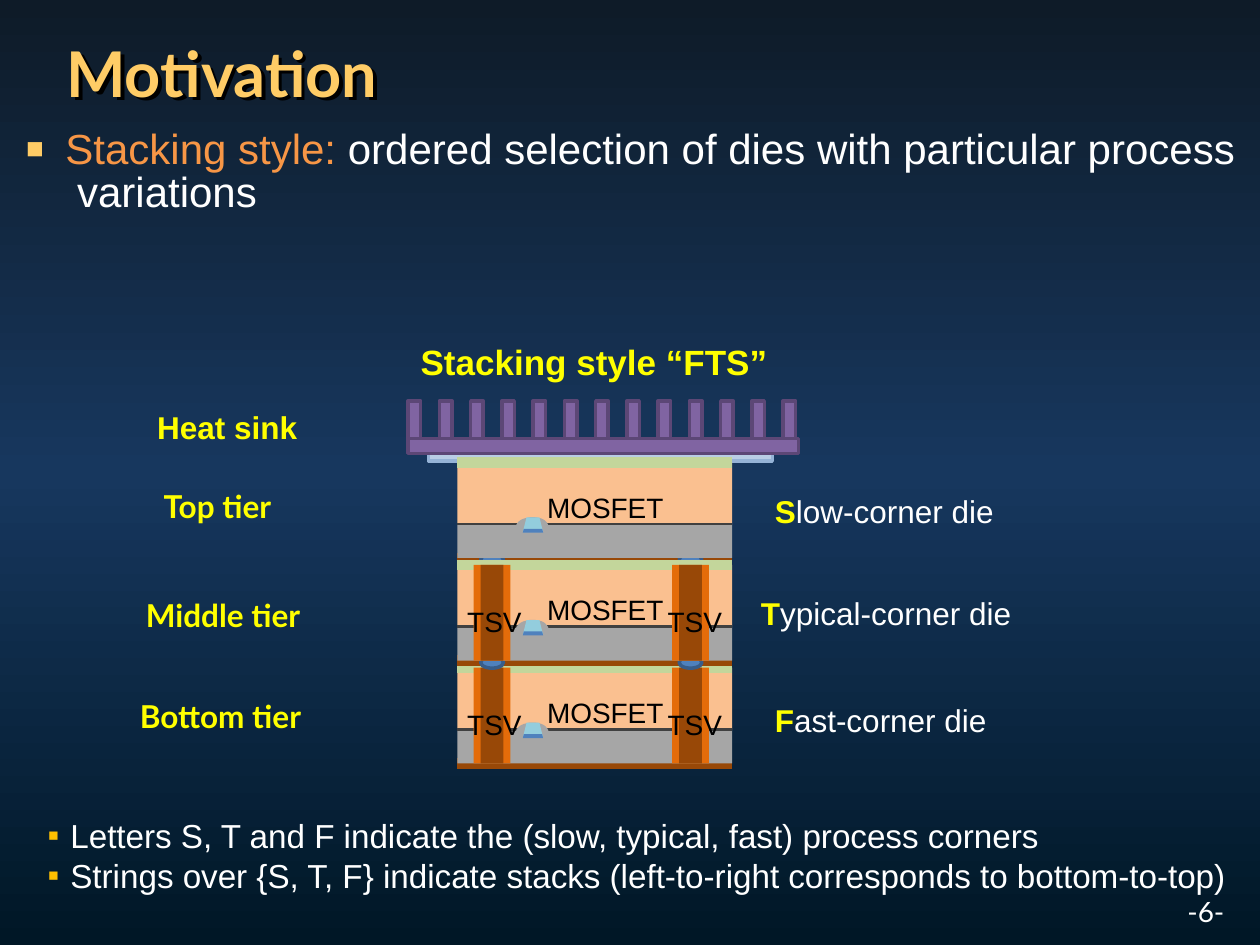
from copy import deepcopy

from lxml import etree
from pptx import Presentation
from pptx.dml.color import RGBColor
from pptx.enum.shapes import MSO_CONNECTOR, MSO_SHAPE as SHAPE
from pptx.enum.text import MSO_ANCHOR as ANCHOR, MSO_AUTO_SIZE as FIT, PP_ALIGN as ALIGN
from pptx.oxml.ns import qn
from pptx.util import Cm, Pt

YELLOW, WHITE, BLACK, GOLD = "FFFF00", "FFFFFF", "000000", "FFCC66"


def rgb(value):
    return RGBColor.from_string(value)


def bezier(p0, p1, p2, p3, steps=8):
    """Points along a cubic curve, without its start."""
    for i in range(1, steps + 1):
        t = i / steps
        u = 1 - t
        yield tuple(u**3 * a + 3 * u * u * t * b + 3 * u * t * t * c + t**3 * d
                    for a, b, c, d in zip(p0, p1, p2, p3))


class Deck:
    font = "Arial"

    def __init__(self, width, height):
        self.prs = Presentation()
        self.prs.slide_width, self.prs.slide_height = Cm(width), Cm(height)
        self.s = self.prs.slides.add_slide(self.prs.slide_layouts[6])

    def background(self, colours, angle):
        fill = self.s.background.fill
        fill.gradient()
        fill.gradient_angle = angle
        stops = self.s.element.find(".//" + qn("a:gsLst"))
        while len(stops) < len(colours):
            stops.append(deepcopy(stops[0]))
        for i, (stop, colour) in enumerate(zip(fill.gradient_stops, colours)):
            stop.position = i / (len(colours) - 1)
            stop.color.rgb = rgb(colour)

    def paint(self, sp, fill, line=None):
        sp.shadow.inherit = False
        sp.fill.solid()
        sp.fill.fore_color.rgb = rgb(fill)
        if line:
            sp.line.color.rgb = rgb(line)
            sp.line.width = Pt(2)
        else:
            sp.line.fill.background()

    def shape(self, x, y, w, h, fill, line=None, kind=SHAPE.RECTANGLE):
        sp = self.s.shapes.add_shape(kind, Cm(x), Cm(y), Cm(w), Cm(h))
        self.paint(sp, fill, line)

    def outline(self, points, fill):
        pts = [(Cm(x), Cm(y)) for x, y in points]
        builder = self.s.shapes.build_freeform(*pts[0], scale=1.0)
        builder.add_line_segments(pts[1:], close=True)
        self.paint(builder.convert_to_shape(), fill)

    def rule(self, x, y, w, colour, width):
        cxn = self.s.shapes.add_connector(
            MSO_CONNECTOR.STRAIGHT, Cm(x), Cm(y), Cm(x + w), Cm(y))
        cxn.line.color.rgb = rgb(colour)
        cxn.line.width = Pt(width)
        etree.SubElement(cxn._element.spPr, qn("a:effectLst"))

    def text(self, x, y, w, h, paragraphs, size, font=None, bold=False,
             wrap=True, fit=FIT.SHAPE_TO_FIT_TEXT):
        """Each paragraph is a list of (text, colour) or (text, colour, bold)."""
        sp = self.s.shapes.add_textbox(Cm(x), Cm(y), Cm(w), Cm(h))
        tf = sp.text_frame
        tf.word_wrap, tf.auto_size = wrap, fit
        for i, runs in enumerate(paragraphs):
            p = tf.add_paragraph() if i else tf.paragraphs[0]
            for content, colour, *own_bold in runs:
                r = p.add_run()
                r.text = content
                r.font.name, r.font.size = font or self.font, Pt(size)
                r.font.bold = own_bold[0] if own_bold else bold
                r.font.color.rgb = rgb(colour)
        return sp

    def bullets(self, sp, char, colour, indent, percent=100):
        for p in sp.text_frame.paragraphs:
            pPr = p._p.get_or_add_pPr()
            pPr.set("marL", str(Cm(indent)))
            pPr.set("indent", str(-Cm(indent)))
            clr = etree.SubElement(pPr, qn("a:buClr"))
            etree.SubElement(clr, qn("a:srgbClr"), val=colour)
            etree.SubElement(pPr, qn("a:buSzPct"), val=str(percent * 1000))
            etree.SubElement(pPr, qn("a:buFont"), typeface=self.font)
            etree.SubElement(pPr, qn("a:buChar"), char=char)

    def drop_shadow(self, sp, distance):
        effects = etree.SubElement(sp._element.spPr, qn("a:effectLst"))
        shadow = etree.SubElement(effects, qn("a:outerShdw"), dist=str(Pt(distance)),
                                  dir="2700000", algn="ctr", rotWithShape="0")
        etree.SubElement(shadow, qn("a:srgbClr"), val=BLACK)


def transistor(d, y):
    left, top_l, top_r, right = (10.41, 1.4), (10.62, 1.12), (10.87, 1.12), (11.05, 1.4)
    curve = [left,
             *bezier(left, (10.36, 1.28), (10.44, 1.15), top_l),
             *bezier(top_l, (10.69, 1.1), (10.77, 1.1), top_r),
             *bezier(top_r, (11.02, 1.15), (11.1, 1.28), right)]
    d.outline([(px, y + py) for px, py in curve], "A6A6A6")
    d.shape(10.54, y + 1.11, 0.41, 0.3, "93CDDD", kind=SHAPE.TRAPEZOID)
    d.shape(10.54, y + 1.34, 0.41, 0.08, "4F81BD", kind=SHAPE.TRAPEZOID)


def tier(d, y, vias, bumps):
    x, w, active, depth = 9.22, 5.54, 1.24, 1.93
    via_lefts = (9.55, 13.55)
    d.rule(x, y + depth, w, "984807", 6)
    if bumps:
        for left in via_lefts:
            d.shape(left + 0.14, y + 1.85, 0.46, 0.23, "4F81BD", "385D8A", SHAPE.OVAL)
    d.shape(x, y, w, active, "FAC090")
    d.rule(x, y, w, "C3D69B", 6)
    d.shape(x, y + active, w, depth - active, "A6A6A6")
    d.rule(x, y + active, w, "404040", 1.5)
    if vias:
        for left in via_lefts:
            d.shape(left, y, 0.74, depth, "E46C0A")
            d.shape(left + 0.14, y, 0.46, depth, "984807")
        for left in (9.17, 13.21):
            d.text(left, y + 0.67, 1.63, 0.94, [[("TSV", BLACK)]], 16, wrap=False)
    transistor(d, y)
    d.text(10.78, y + 0.44, 2.9, 0.94, [[("MOSFET", BLACK)]], 16, wrap=False)


def main():
    d = Deck(25.4, 19.05)
    d.background(["001726", "17375E", "0E1B28"], 90)

    # Page number and title
    sp = d.text(23.42, 17.91, 1.78, 0.94, [[("-6-", WHITE)]], 16, "Lato", wrap=False)
    sp.text_frame.paragraphs[0].alignment = ALIGN.CENTER
    sp = d.text(1.09, 0.56, 23.57, 1.98, [[("Motivation", GOLD)]], 36, "Lato", True,
                fit=FIT.NONE)
    sp.text_frame.vertical_anchor = ANCHOR.MIDDLE
    sp.text_frame.paragraphs[0].line_spacing = 0.9
    d.drop_shadow(sp, 3)

    # Definition
    sp = d.text(0.28, 2.51, 25.02, 6.55, [[
        ("Stacking style: ", "F79646"),
        ("ordered selection of dies with particular process  variations", WHITE),
    ]], 24, fit=FIT.NONE)
    sp.text_frame.paragraphs[0].line_spacing = 0.85
    d.bullets(sp, "■", GOLD, 0.79, 70)

    # Heat sink: spreader, base and fins
    d.shape(8.64, 9.14, 6.93, 0.15, "B9CDE5", "95B3D7")
    d.shape(8.23, 8.84, 7.87, 0.3, "8064A2", "5C4776")
    for i in range(13):
        d.shape(8.23 + i * 0.63, 8.08, 0.25, 0.76, "8064A2", "5C4776")
    d.text(2.92, 8.1, 3.63, 1.02, [[("Heat sink", YELLOW)]], 18, bold=True)

    # Notes and caption
    sp = d.text(0.71, 16.31, 24.41, 2.03, [
        [("Letters S, T and F indicate the (slow, typical, fast) process corners", WHITE)],
        [("Strings over {S, T, F} indicate stacks "
          "(left-to-right corresponds to bottom-to-top)", WHITE)],
    ], 19)
    d.bullets(sp, "▪", "FFC000", 0.46)
    d.text(8.23, 6.73, 7.82, 1.12, [[("Stacking style “FTS”", YELLOW)]], 20, bold=True)

    # Tiers: level, name and its box, corner and its box, vias, bumps
    tiers = [
        (2, "Bottom tier", (2.57, 13.92, 4.34), "Fast", (15.37, 14.0, 5.28), True, False),
        (0, "Top tier", (3.05, 9.7, 3.25), "Slow", (15.37, 9.8, 5.28), False, True),
        (1, "Middle tier", (2.69, 11.89, 3.94), "Typical", (15.09, 11.86, 5.79), True, True),
    ]
    for level, name, name_box, corner, corner_box, vias, bumps in tiers:
        tier(d, 9.32 + level * 2.07, vias, bumps)
        d.text(*corner_box, 1.02, [[(corner[0], YELLOW, True),
                                    (corner[1:] + "-corner die", WHITE)]], 18)
        d.text(*name_box, 1.02, [[(name, YELLOW)]], 18, "Lato", True)

    d.prs.save("out.pptx")


if __name__ == "__main__":
    main()
